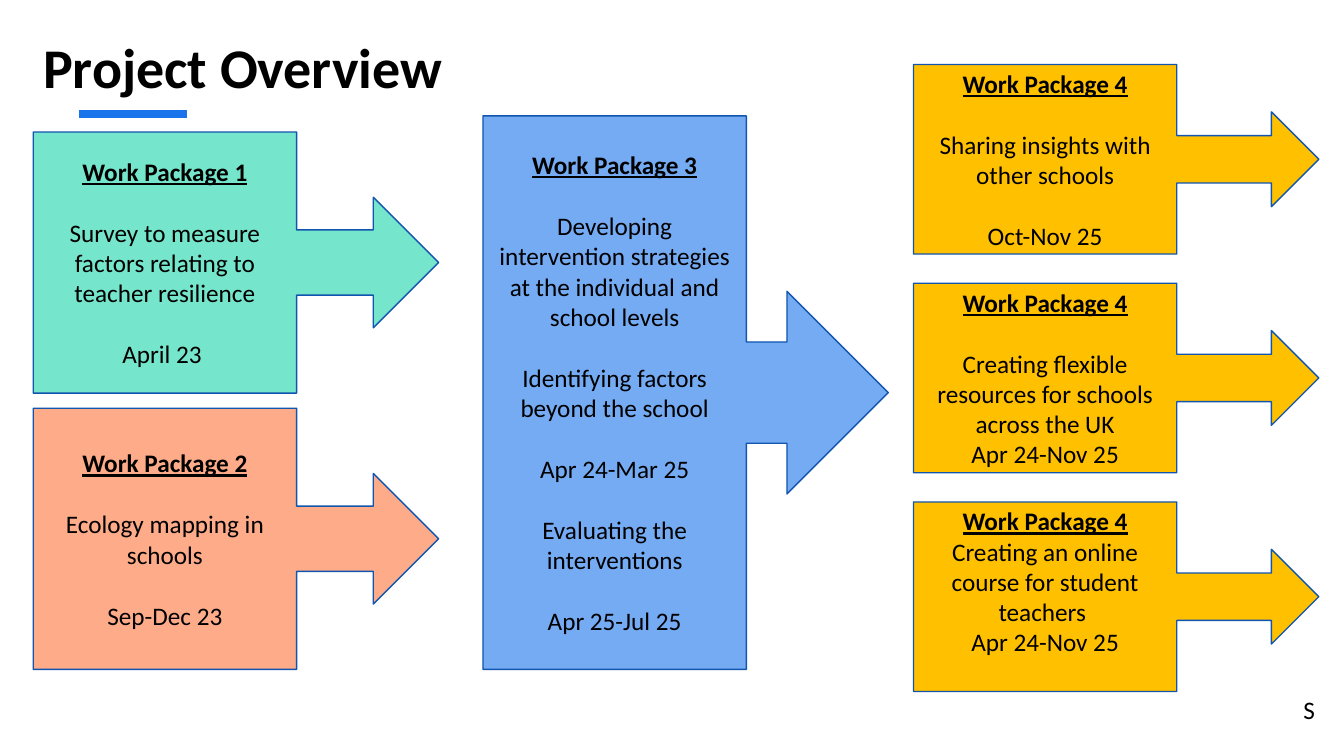
import pptx
import pptx.util
import pptx.dml.color
import pptx.enum.shapes
import pptx.enum.text
import pptx.oxml

Inches, Pt = pptx.util.Inches, pptx.util.Pt
ALIGN = pptx.enum.text.PP_ALIGN
ANCHOR = pptx.enum.text.MSO_ANCHOR

COLUMNS = (0.33, 4.79, 9.06)
CARD_WIDTH = 4.02
SURVEY_TOP, SURVEY_HEIGHT, SURVEY_GAP = 1.31, 2.59, 0.15
OUTPUT_TOP, OUTPUT_HEIGHT, OUTPUT_GAP = 0.64, 1.88, 0.29
LINE_HEIGHT = 22  # points taken by one line of 18 pt text

# Each package is a list of text groups; groups are set one line apart.
SURVEYS = [
    ("75E5CB", [["Work Package 1"],
                ["Survey to measure factors relating to teacher resilience"],
                ["April 23 "]]),
    ("FEAB8A", [["Work Package 2"], ["Ecology mapping in schools"], ["Sep-Dec 23"]]),
]
INTERVENTIONS = [
    ["Work Package 3"],
    ["Developing intervention strategies at the individual and school levels"],
    ["Identifying factors beyond the school"],
    ["Apr 24-Mar 25"],
    ["Evaluating the interventions"],
    ["Apr 25-Jul 25"],
]
OUTPUTS = [
    ([["Work Package 4"], ["Sharing insights with other schools"], ["Oct-Nov 25"]], 0),
    ([["Work Package 4"],
      ["Creating flexible resources for schools across the UK", "Apr 24-Nov 25"]], 0),
    ([["Work Package 4", "Creating an online course for student teachers ",
       "Apr 24-Nov 25"]], LINE_HEIGHT),
]


def color(hex_code):
    return pptx.dml.color.RGBColor.from_string(hex_code)


def write(paragraph, text, size=18, bold=False, underline=False,
          align=ALIGN.LEFT, before=0):
    paragraph.alignment = align
    paragraph.space_before = Pt(before)
    run = paragraph.add_run()
    run.text = text
    run.font.name = "Calibri"
    run.font.size = Pt(size)
    run.font.bold = bold
    run.font.underline = underline
    run.font.color.rgb = color("000000")


def add_label(slide, text, left, top, width, height, **text_format):
    label = slide.shapes.add_textbox(*map(Inches, (left, top, width, height)))
    label.text_frame.word_wrap = True
    write(label.text_frame.paragraphs[0], text, **text_format)


def add_accent(slide, left, right, y):
    accent = slide.shapes.add_connector(
        pptx.enum.shapes.MSO_CONNECTOR.STRAIGHT, *map(Inches, (left, y, right, y)))
    accent.line.color.rgb = color("1973EB")
    accent.line.width = Pt(6)
    accent._element.spPr.append(pptx.oxml.parse_xml(
        '<a:effectLst xmlns:a="http://schemas.openxmlformats.org/drawingml/2006/main"/>'))


def add_package(slide, groups, fill, column, top, height, space_below=0):
    """Draw an arrow callout whose first line is an underlined heading."""
    package = slide.shapes.add_shape(
        pptx.enum.shapes.MSO_SHAPE.RIGHT_ARROW_CALLOUT,
        *map(Inches, (COLUMNS[column], top, CARD_WIDTH, height)))
    package.shadow.inherit = False
    package.fill.solid()
    package.fill.fore_color.rgb = color(fill)
    package.line.color.rgb = color("1255AE")
    package.line.width = Pt(1)

    frame = package.text_frame
    frame.word_wrap = True
    frame.vertical_anchor = ANCHOR.MIDDLE
    frame.margin_bottom = Inches(0.05) + Pt(space_below)
    for group_index, group in enumerate(groups):
        for line_index, text in enumerate(group):
            heading = group_index == line_index == 0
            new_group = group_index > 0 and line_index == 0
            paragraph = frame.paragraphs[0] if heading else frame.add_paragraph()
            write(paragraph, text, bold=heading, underline=heading,
                  align=ALIGN.CENTER, before=LINE_HEIGHT if new_group else 0)


def main():
    deck = pptx.Presentation()
    deck.slide_width, deck.slide_height = Inches(13.33), Inches(7.5)
    slide = deck.slides.add_slide(deck.slide_layouts[6])

    add_accent(slide, 0.78, 1.85, 1.13)
    for row, (fill, groups) in enumerate(SURVEYS):
        top = SURVEY_TOP + row * (SURVEY_HEIGHT + SURVEY_GAP)
        add_package(slide, groups, fill, 0, top, SURVEY_HEIGHT)
    add_package(slide, INTERVENTIONS, "75ABF3", 1, 1.15, 5.49)
    for row, (groups, space_below) in enumerate(OUTPUTS):
        top = OUTPUT_TOP + row * (OUTPUT_HEIGHT + OUTPUT_GAP)
        add_package(slide, groups, "FFC000", 2, top, OUTPUT_HEIGHT, space_below)

    add_label(slide, "Project Overview", COLUMNS[0], 0.27, 11.5, 1.45, size=40, bold=True)
    add_label(slide, "S", 12.83, 6.84, 0.5, 0.4)
    deck.save("out.pptx")


if __name__ == "__main__":
    main()
